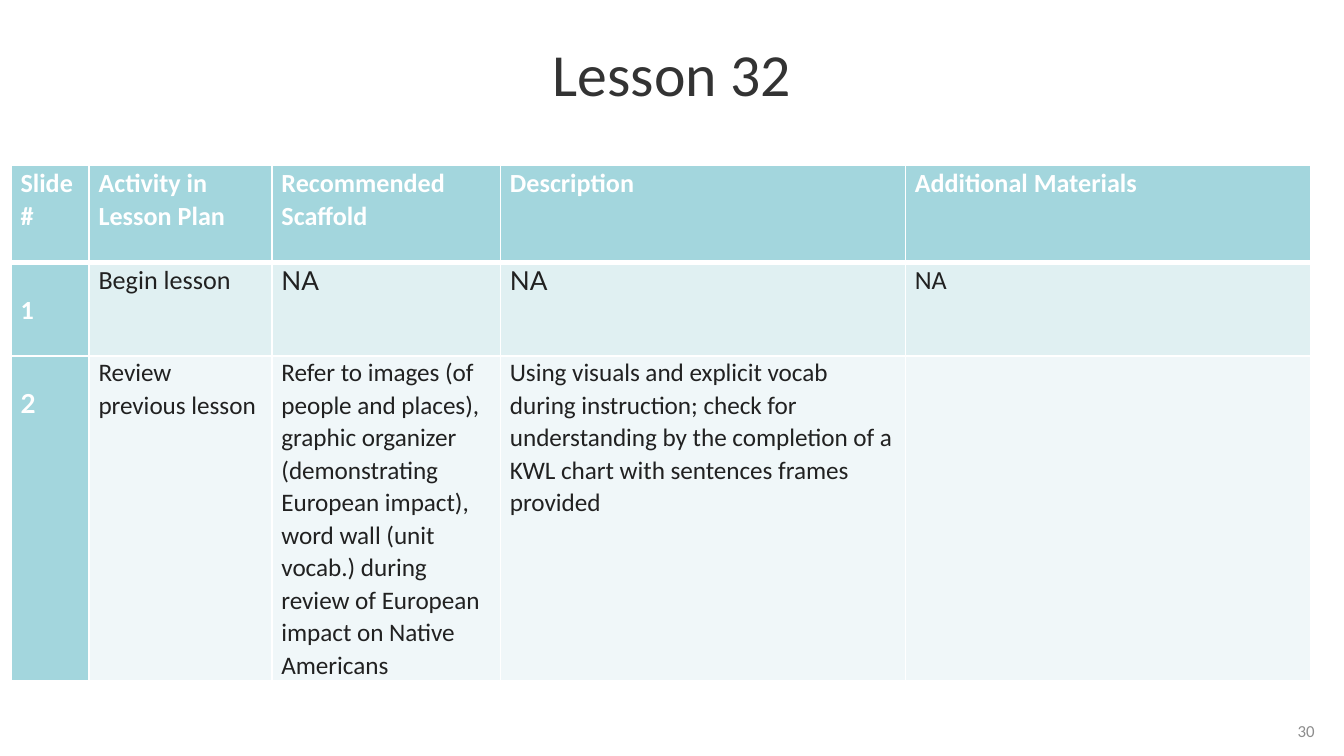
from lxml.etree import SubElement
from pptx import Presentation
from pptx.dml.color import RGBColor
from pptx.enum.text import MSO_ANCHOR, PP_ALIGN
from pptx.oxml.ns import qn
from pptx.util import Pt

WHITE, TEAL, INK = "FFFFFF", "A3D6DD", "212121"
BAND_FILLS = ["E0F0F2", "F0F7F9"]
COLUMN_WIDTHS = [41.8, 98, 122.4, 216.9, 216.9]
ROW_HEIGHTS = [52, 50.2, 174]
HEADER = ["Slide #", "Activity in Lesson Plan", "Recommended Scaffold",
          "Description", "Additional Materials"]
LESSON_ROWS = [
    ["1", "Begin lesson", "NA", "NA", "NA"],
    ["2", "Review previous lesson",
     "Refer to images (of people and places), graphic organizer "
     "(demonstrating European impact), word wall (unit vocab.) during "
     "review of European impact on Native Americans",
     "Using visuals and explicit vocab during instruction; check for "
     "understanding by the completion of a KWL chart with sentences "
     "frames provided", ""],
]
LATO_CELLS = {(1, 2), (1, 3), (2, 0)}


def rgb(color):
    """Turn a hex string into a colour."""
    return RGBColor.from_string(color)


def format_text(text_frame, size, color, font="Calibri", bold=False,
                align=PP_ALIGN.LEFT, spacing=1.0):
    """Format every paragraph and run of a text frame."""
    for paragraph in text_frame.paragraphs:
        paragraph.alignment = align
        paragraph.line_spacing = spacing
        for run in paragraph.runs:
            run.font.size = Pt(size)
            run.font.name = font
            run.font.bold = bold
            run.font.color.rgb = rgb(color)


def set_borders(cell, color, bottom_width):
    """Draw the four borders of a cell."""
    properties = cell._tc.get_or_add_tcPr()
    for side, width in (("L", 1), ("R", 1), ("T", 1), ("B", bottom_width)):
        line = SubElement(properties, qn(f"a:ln{side}"), w=str(Pt(width)))
        fill = SubElement(line, qn("a:solidFill"))
        SubElement(fill, qn("a:srgbClr"), val=color)


def add_title(slide, left, top, width, height):
    """Place the lesson title in the title placeholder."""
    title = slide.shapes.title
    title.left, title.top = Pt(left), Pt(top)
    title.width, title.height = Pt(width), Pt(height)
    title.text_frame.text = "Lesson 32"
    title.text_frame.vertical_anchor = MSO_ANCHOR.MIDDLE
    format_text(title.text_frame, 32, "333333", align=PP_ALIGN.CENTER, spacing=0.9)


def fill_cell(cell, text, row, column):
    """Write and format one cell of the lesson table."""
    is_heading = row == 0 or column == 0
    cell.margin_left = cell.margin_right = Pt(5)
    cell.margin_top = cell.margin_bottom = Pt(0)
    cell.vertical_anchor = MSO_ANCHOR.TOP
    set_borders(cell, WHITE, 3 if row == 0 else 1)
    cell.fill.solid()
    cell.fill.fore_color.rgb = rgb(TEAL if is_heading else BAND_FILLS[row - 1])
    cell.text_frame.text = text
    format_text(cell.text_frame,
                size=13.5 if row == 2 and column > 0 else 14,
                color=WHITE if is_heading else INK,
                font="Lato" if (row, column) in LATO_CELLS else "Calibri",
                bold=is_heading,
                spacing=2.0 if row > 0 and column == 0 else 1.06)


def add_lesson_table(slide, left, top):
    """Place the table of lesson activities."""
    rows = [HEADER, *LESSON_ROWS]
    frame = slide.shapes.add_table(
        len(rows), len(HEADER), Pt(left), Pt(top),
        Pt(sum(COLUMN_WIDTHS)), Pt(sum(ROW_HEIGHTS)))
    table = frame.table
    for column, width in zip(table.columns, COLUMN_WIDTHS):
        column.width = Pt(width)
    for row, height in zip(table.rows, ROW_HEIGHTS):
        row.height = Pt(height)
    for row_index, texts in enumerate(rows):
        for column_index, text in enumerate(texts):
            fill_cell(table.cell(row_index, column_index), text,
                      row_index, column_index)


def add_slide_number(slide, left, top, width, height):
    """Place the slide number at the lower right."""
    text_frame = slide.shapes.add_textbox(
        Pt(left), Pt(top), Pt(width), Pt(height)).text_frame
    text_frame.word_wrap = True
    text_frame.vertical_anchor = MSO_ANCHOR.MIDDLE
    text_frame.text = "30"
    format_text(text_frame, 9, "8D8D8D", align=PP_ALIGN.RIGHT)


def main():
    """Build the lesson slide and save it."""
    presentation = Presentation()
    presentation.slide_width, presentation.slide_height = Pt(720), Pt(405)
    slide = presentation.slides.add_slide(presentation.slide_layouts[5])
    add_slide_number(slide, 535.7, 378, 175.7, 27)
    add_title(slide, 0, 0, 720, 82.8)
    add_lesson_table(slide, 6, 88.6)
    presentation.save("out.pptx")


if __name__ == "__main__":
    main()
